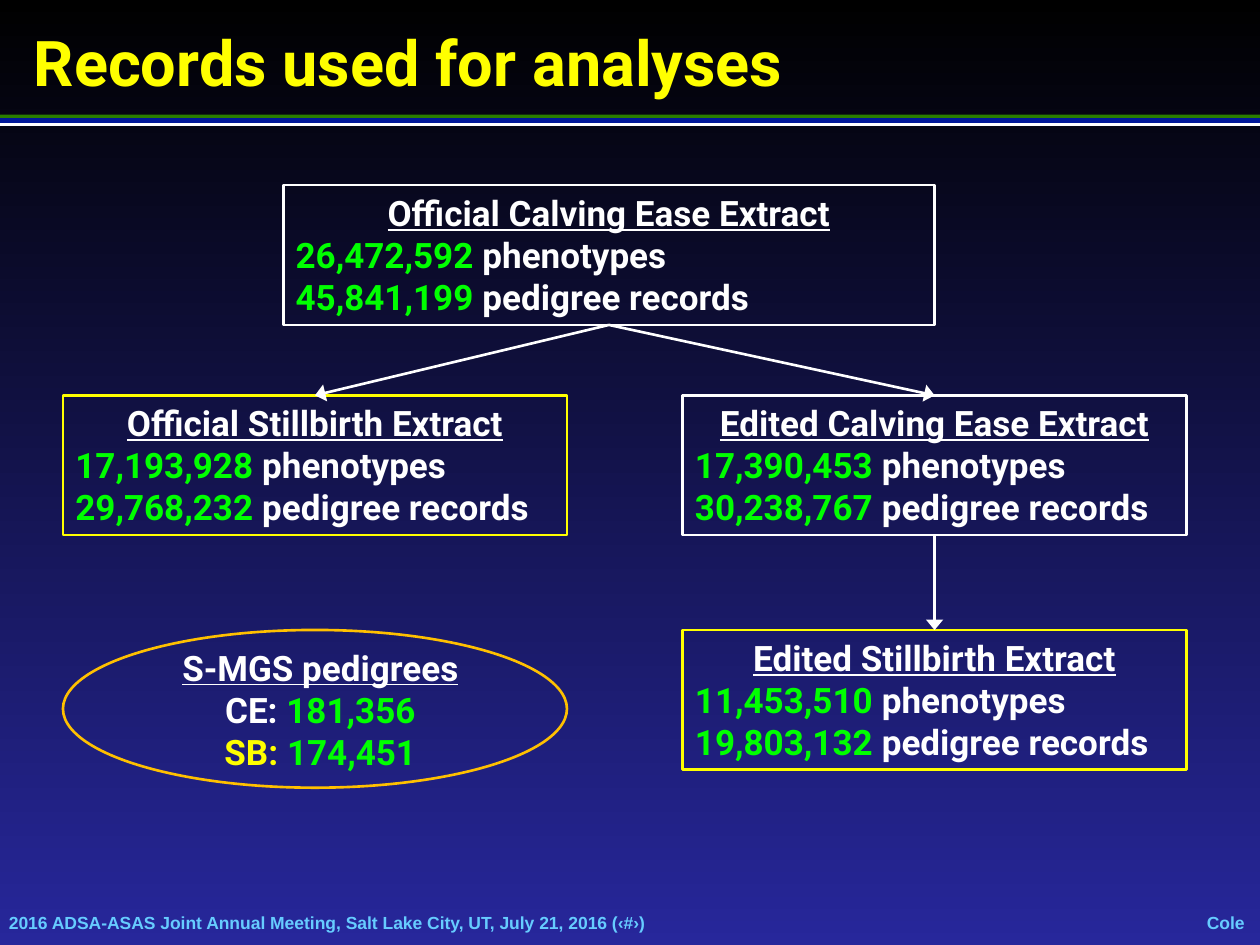
import pptx
import pptx.dml.color
import pptx.enum.shapes
import pptx.enum.text
import pptx.oxml
import pptx.oxml.ns
import pptx.util
from pptx.util import Cm

SHAPE = pptx.enum.shapes.MSO_SHAPE
ALIGN = pptx.enum.text.PP_ALIGN
ANCHOR = pptx.enum.text.MSO_ANCHOR
AUTO_SIZE = pptx.enum.text.MSO_AUTO_SIZE

COLORS = {
    "white": "FFFFFF", "yellow": "FFFF00", "green": "00FF00", "orange": "FFC000",
    "footer": "66CCFF", "rule green": "2A7E00", "rule blue": "001799",
    "top": "000000", "bottom": "27279B",
}
TITLE = "Records used for analyses"
FOOTERS = [  # text, left, width, alignment
    ("2016 ADSA-ASAS Joint Annual Meeting, Salt Lake City, UT, July 21, 2016 (‹#›)",
     0.18, 20.55, ALIGN.LEFT),
    ("Cole", 24.21, 1, ALIGN.CENTER),
]
RULES = [("rule green", 2.31, 0.08), ("white", 2.46, 0.08), ("rule blue", 2.38, 0.1)]

LEFT_COLUMN, RIGHT_COLUMN = 1.27, 13.76
ROWS = [3.73, 7.97, 12.7]
COLUMN_WIDTH, BOX_HEIGHT = 10.16, 2.82
EXTRACTS = {  # heading: phenotypes, pedigree records, outline, left, top, width
    "Official Calving Ease Extract":
        ("26,472,592", "45,841,199", "white", 5.71, ROWS[0], 13.13),
    "Official Stillbirth Extract":
        ("17,193,928", "29,768,232", "yellow", LEFT_COLUMN, ROWS[1], COLUMN_WIDTH),
    "Edited Stillbirth Extract":
        ("11,453,510", "19,803,132", "yellow", RIGHT_COLUMN, ROWS[2], COLUMN_WIDTH),
    "Edited Calving Ease Extract":
        ("17,390,453", "30,238,767", "white", RIGHT_COLUMN, ROWS[1], COLUMN_WIDTH),
}
ARROWS = [
    ("Official Calving Ease Extract", "Official Stillbirth Extract"),
    ("Official Calving Ease Extract", "Edited Calving Ease Extract"),
    ("Edited Calving Ease Extract", "Edited Stillbirth Extract"),
]
PEDIGREES = [
    [("S-MGS pedigrees", "white")],
    [("CE: ", "white"), ("181,356", "green")],
    [("SB: ", "yellow"), ("174,451", "green")],
]


def rgb(name):
    return pptx.dml.color.RGBColor.from_string(COLORS[name])


def add_run(paragraph, text, color, size=20, font="Roboto", underline=None):
    run = paragraph.add_run()
    run.text = text
    run.font.name = font
    run.font.size = pptx.util.Pt(size)
    run.font.bold = True
    run.font.underline = underline
    run.font.color.rgb = rgb(color)


def write_lines(shape, lines, body_alignment):
    """Write a centred, underlined heading and the lines below it."""
    frame = shape.text_frame
    frame.word_wrap = True
    frame.auto_size = AUTO_SIZE.SHAPE_TO_FIT_TEXT
    frame.vertical_anchor = ANCHOR.TOP
    for index, runs in enumerate(lines):
        paragraph = frame.add_paragraph() if index else frame.paragraphs[0]
        paragraph.alignment = body_alignment if index else ALIGN.CENTER
        for text, color in runs:
            add_run(paragraph, text, color, underline=index == 0)


def add_outline(slide, kind, color, left, top, width, height):
    shape = slide.shapes.add_shape(kind, Cm(left), Cm(top), Cm(width), Cm(height))
    shape.shadow.inherit = False
    shape.fill.background()
    shape.line.color.rgb = rgb(color)
    shape.line.width = pptx.util.Pt(1.5)
    return shape


def add_background(slide):
    fill = slide.background.fill
    fill.gradient()
    fill.gradient_angle = 270
    for stop, color, position in zip(fill.gradient_stops, ("top", "bottom"), (0, 1)):
        stop.color.rgb = rgb(color)
        stop.position = position


def add_footer(slide, text, left, width, alignment):
    box = slide.shapes.add_textbox(Cm(left), Cm(18.38), Cm(width), Cm(0.43))
    frame = box.text_frame
    frame.margin_left = frame.margin_right = frame.margin_top = frame.margin_bottom = 0
    frame.word_wrap = True
    frame.vertical_anchor = ANCHOR.MIDDLE
    paragraph = frame.paragraphs[0]
    paragraph.alignment = alignment
    add_run(paragraph, text, "footer", size=10, font="Arial")


def add_title(slide):
    title = slide.shapes.title
    title.left, title.top, title.width, title.height = Cm(0.43), Cm(0.35), Cm(24.54), Cm(1.78)
    title.text_frame.vertical_anchor = ANCHOR.MIDDLE
    paragraph = title.text_frame.paragraphs[0]
    paragraph.alignment = ALIGN.LEFT
    add_run(paragraph, TITLE, "yellow", size=36)


def add_arrow(slide, source, target):
    arrow = slide.shapes.add_connector(pptx.enum.shapes.MSO_CONNECTOR.STRAIGHT, 0, 0, 0, 0)
    arrow.begin_connect(source, 2)
    arrow.end_connect(target, 0)
    arrow.line.color.rgb = rgb("white")
    arrow.line.width = pptx.util.Pt(1.5)
    namespace = pptx.oxml.ns.nsdecls("a")
    arrow.line._get_or_add_ln().append(
        pptx.oxml.parse_xml(f'<a:tailEnd {namespace} type="triangle" w="lg" len="med"/>'))
    arrow._element.spPr.append(pptx.oxml.parse_xml(f"<a:effectLst {namespace}/>"))


def main():
    presentation = pptx.Presentation()
    presentation.slide_width, presentation.slide_height = Cm(25.4), Cm(19.05)
    slide = presentation.slides.add_slide(presentation.slide_layouts[5])
    add_background(slide)
    for footer in FOOTERS:
        add_footer(slide, *footer)
    for color, top, height in RULES:
        rule = slide.shapes.add_shape(SHAPE.RECTANGLE, 0, Cm(top), Cm(25.4), Cm(height))
        rule.shadow.inherit = False
        rule.fill.solid()
        rule.fill.fore_color.rgb = rgb(color)
        rule.line.fill.background()
    add_title(slide)

    boxes = {}
    for heading, (phenotypes, pedigrees, color, left, top, width) in EXTRACTS.items():
        box = add_outline(slide, SHAPE.RECTANGLE, color, left, top, width, BOX_HEIGHT)
        write_lines(box, [
            [(heading, "white")],
            [(phenotypes, "green"), (" phenotypes", "white")],
            [(pedigrees + " ", "green"), ("pedigree records", "white")],
        ], ALIGN.LEFT)
        boxes[heading] = box
    for source, target in ARROWS:
        add_arrow(slide, boxes[source], boxes[target])

    add_outline(slide, SHAPE.OVAL, "orange", LEFT_COLUMN, ROWS[2], COLUMN_WIDTH, 3.18)
    pedigree_box = slide.shapes.add_textbox(Cm(2.33), Cm(12.9), Cm(8.26), Cm(BOX_HEIGHT))
    write_lines(pedigree_box, PEDIGREES, ALIGN.CENTER)
    presentation.save("out.pptx")


if __name__ == "__main__":
    main()
